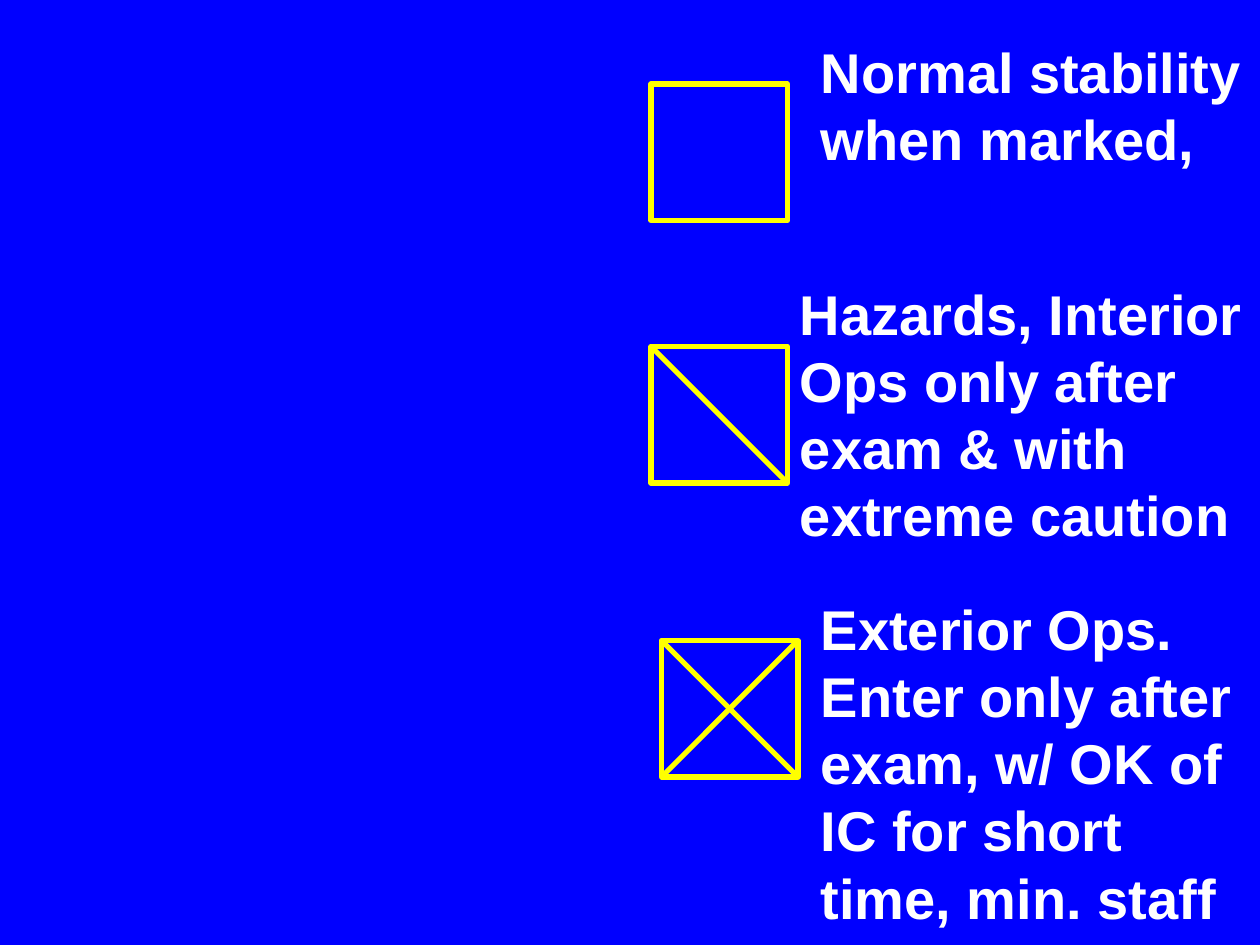
import pptx
import pptx.dml.color
import pptx.enum.shapes
import pptx.enum.text
import pptx.oxml
import pptx.util


def color(value):
    return pptx.dml.color.RGBColor.from_string(value)


class SlideBuilder:
    CELL = pptx.util.Inches(1) / 12
    BACKGROUND = "0000FF"
    MARK = "FFFF00"
    TEXT = "FFFFFF"
    FONT = "Arial"

    def __init__(self, prs):
        self.slide = prs.slides.add_slide(prs.slide_layouts[6])
        fill = self.slide.background.fill
        fill.solid()
        fill.fore_color.rgb = color(self.BACKGROUND)

    def grid(self, *cells):
        return [round(cell * self.CELL) for cell in cells]

    def outline(self, sp):
        sp.line.color.rgb = color(self.MARK)
        sp.line.width = pptx.util.Pt(3)

    def square(self, col, row, size):
        sp = self.slide.shapes.add_shape(
            pptx.enum.shapes.MSO_SHAPE.RECTANGLE, *self.grid(col, row, size, size))
        sp.shadow.inherit = False
        sp.fill.background()
        self.outline(sp)

    def line(self, col1, row1, col2, row2):
        sp = self.slide.shapes.add_connector(
            pptx.enum.shapes.MSO_CONNECTOR.STRAIGHT, *self.grid(col1, row1, col2, row2))
        self.outline(sp)
        sp._element.spPr.append(pptx.oxml.parse_xml(
            '<a:effectLst xmlns:a="http://schemas.openxmlformats.org/drawingml/2006/main"/>'))

    def text(self, col, row, width, height, wording):
        sp = self.slide.shapes.add_textbox(*self.grid(col, row, width, height))
        tf = sp.text_frame
        tf.word_wrap = True
        tf.auto_size = pptx.enum.text.MSO_AUTO_SIZE.SHAPE_TO_FIT_TEXT
        p = tf.paragraphs[0]
        p.text = wording
        p.line_spacing = pptx.util.Pt(38.4)
        p.font.name = self.FONT
        p.font.size = pptx.util.Pt(32)
        p.font.bold = True
        p.font.color.rgb = color(self.TEXT)


def main():
    prs = pptx.Presentation()
    prs.slide_width = pptx.util.Inches(10)
    prs.slide_height = pptx.util.Inches(7.5)
    s = SlideBuilder(prs)

    columns, size = 120, 13
    markings = [
        (62, 8, 0, 77, 3, 14, "Normal stability when marked,"),
        (62, 33, 1, 75, 26, 26.8,
         "Hazards, Interior Ops only after exam & with extreme caution"),
        (63, 61, 2, 77, 56, 33.2,
         "Exterior Ops. Enter only after exam, w/ OK of IC for short time, min. staff"),
    ]
    for col, row, strokes, text_col, text_row, height, wording in markings:
        s.square(col, row, size)
        if strokes >= 1:
            s.line(col, row, col + size, row + size)
        if strokes == 2:
            s.line(col + size, row, col, row + size)
        s.text(text_col, text_row, columns - text_col, height, wording)

    prs.save("out.pptx")


if __name__ == "__main__":
    main()
